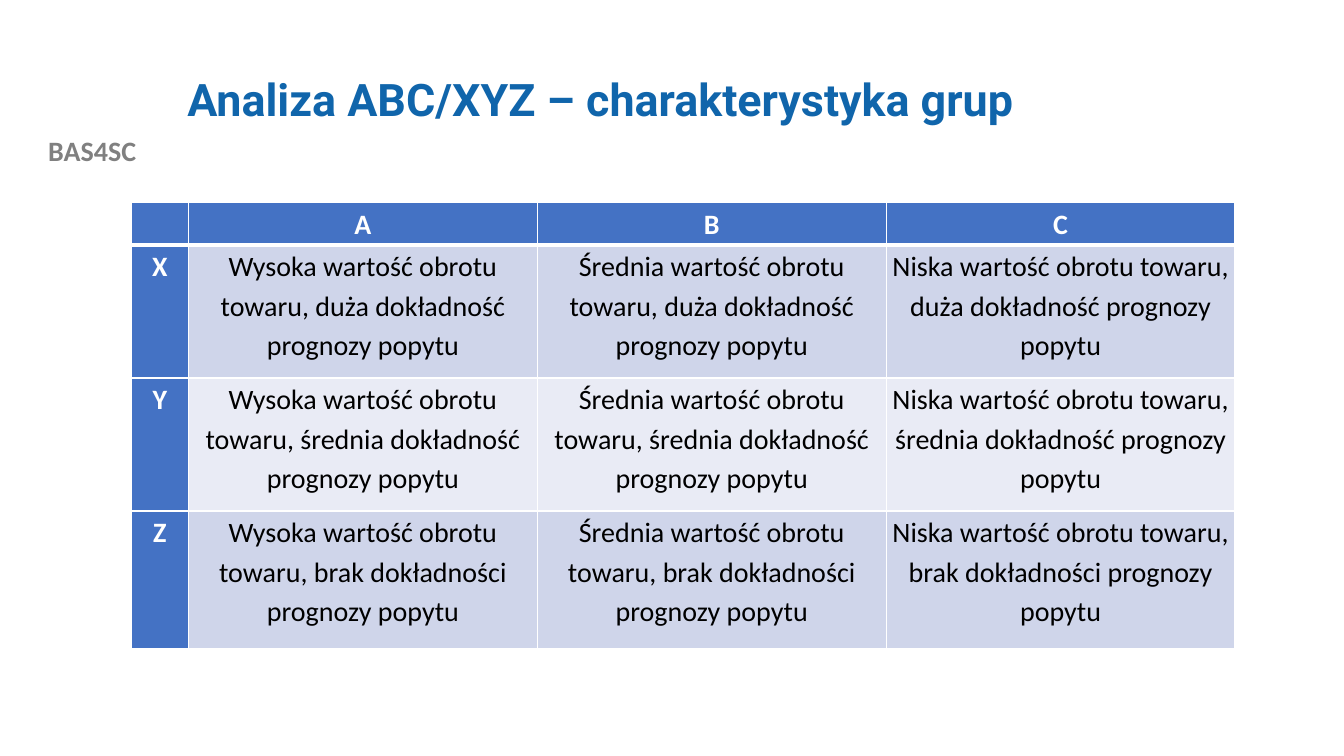
from lxml import etree
from pptx import Presentation
from pptx.dml.color import RGBColor
from pptx.enum.text import MSO_ANCHOR, PP_ALIGN
from pptx.oxml.ns import qn
from pptx.util import Inches, Pt

COLORS = {
    "title": "1065AB",
    "label": "808080",
    "header": "4472C4",
    "band_dark": "CFD5EA",
    "band_light": "E9EBF5",
    "white": "FFFFFF",
    "black": "000000",
}


def style_text(p, font, size, color, bold):
    for r in p.runs:
        r.font.name = font
        r.font.size = Pt(size)
        r.font.bold = bold
        r.font.color.rgb = RGBColor.from_string(COLORS[color])


def add_border(cell, side, width):
    ln = etree.SubElement(cell._tc.get_or_add_tcPr(), qn(f"a:ln{side}"), w=str(Pt(width)))
    fill = etree.SubElement(ln, qn("a:solidFill"))
    etree.SubElement(fill, qn("a:srgbClr"), val=COLORS["white"])


prs = Presentation()
prs.slide_width = Inches(13.33)
prs.slide_height = Inches(7.5)
s = prs.slides.add_slide(prs.slide_layouts[6])

# Course label
tf = s.shapes.add_textbox(Inches(0), Inches(1.28), Inches(1.83), Inches(0.44)).text_frame
tf.word_wrap = True
tf.text = "BAS4SC"
p = tf.paragraphs[0]
p.alignment = PP_ALIGN.CENTER
style_text(p, "Calibri", 20, "label", True)

# Title
tf = s.shapes.add_textbox(Inches(1.76), Inches(0.4), Inches(10.66), Inches(1.22)).text_frame
tf.word_wrap = True
tf.vertical_anchor = MSO_ANCHOR.MIDDLE
tf.text = "Analiza ABC/XYZ – charakterystyka grup"
p = tf.paragraphs[0]
p.line_spacing = 0.9
style_text(p, "Roboto", 32, "title", True)

# Table wording: turnover value by column, forecast accuracy by row
turnover = {"A": "Wysoka", "B": "Średnia", "C": "Niska"}
accuracy = {"X": "duża dokładność", "Y": "średnia dokładność", "Z": "brak dokładności"}
rows = [["", *turnover]]
for group, level in accuracy.items():
    rows.append([group] + [f"{value} wartość obrotu towaru, {level} prognozy popytu"
                           for value in turnover.values()])

# Table grid
table = s.shapes.add_table(4, 4, Inches(1.3), Inches(2.01), Inches(10.95), Inches(4.43)).table
for column, width in zip(table.columns, [0.57, 3.46, 3.46, 3.46]):
    column.width = Inches(width)
for row, height in zip(table.rows, [0.42, 1.32, 1.32, 1.37]):
    row.height = Inches(height)

# Table cells
for i, texts in enumerate(rows):
    for j, text in enumerate(texts):
        cell = table.cell(i, j)
        is_header = i == 0 or j == 0
        cell.margin_left = cell.margin_right = Inches(0.06)
        cell.margin_top = cell.margin_bottom = 0
        for side in "LRTB":
            under_header = (i, side) in [(0, "B"), (1, "T")]
            add_border(cell, side, 3 if under_header else 1)
        band = "band_dark" if i % 2 else "band_light"
        cell.fill.solid()
        cell.fill.fore_color.rgb = RGBColor.from_string(COLORS["header" if is_header else band])
        cell.text_frame.text = text
        p = cell.text_frame.paragraphs[0]
        p.alignment = PP_ALIGN.CENTER
        p.line_spacing = 1.15
        p.space_after = Pt(6)
        style_text(p, "Calibri", 20, "white" if is_header else "black", is_header)

prs.save("out.pptx")
